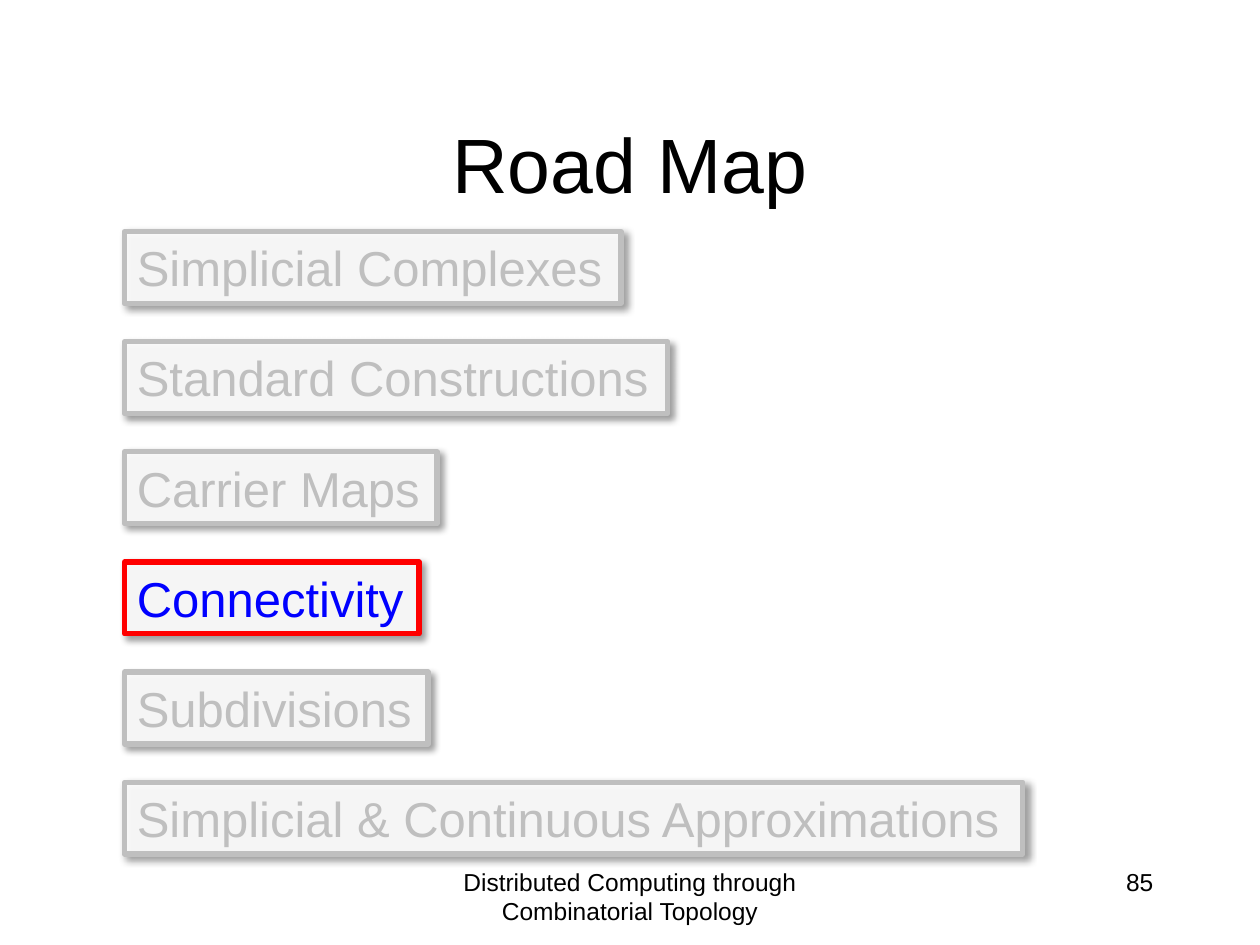
from lxml.etree import SubElement
from pptx import Presentation
from pptx.dml.color import RGBColor
from pptx.enum.text import MSO_ANCHOR, MSO_AUTO_SIZE, PP_ALIGN
from pptx.oxml.ns import qn
from pptx.util import Cm, Pt

GREY, RED, BLUE, BLACK, WHITE = "BFBFBF", "FF0000", "0000FF", "000000", "FFFFFF"
CURRENT = "Connectivity"
# Topic and width of its box in cm
TOPICS = [
    ("Simplicial Complexes", 10.01),
    ("Standard Constructions", 10.95),
    ("Carrier Maps", 6.3),
    (CURRENT, 5.94),
    ("Subdivisions", 6.12),
    ("Simplicial & Continuous Approximations", 18.11),
]


def color(value):
    return RGBColor.from_string(value)


def add_text(s, box, text, size, hue=BLACK, align=PP_ALIGN.LEFT,
             anchor=MSO_ANCHOR.TOP, wrap=True):
    sp = s.shapes.add_textbox(*(Cm(v) for v in box))
    tf = sp.text_frame
    tf.word_wrap = wrap
    tf.vertical_anchor = anchor
    tf.text = text
    p = tf.paragraphs[0]
    p.alignment = align
    font = p.runs[0].font
    font.name, font.size = "Arial", Pt(size)
    font.color.rgb = color(hue)
    return sp


def set_alpha(clr, percent):
    SubElement(clr, qn("a:alpha"), val=str(percent * 1000))


def add_shadow(sp):
    sp.shadow.inherit = False
    effects = sp._element.spPr.find(qn("a:effectLst"))
    shadow = SubElement(effects, qn("a:outerShdw"), blurRad=str(Pt(4)),
                        dist=str(Pt(3)), dir=str(45 * 60000),
                        algn="tl", rotWithShape="0")
    clr = SubElement(shadow, qn("a:srgbClr"), val=BLACK)
    set_alpha(clr, 40)


def add_topic(s, box, text):
    active = text == CURRENT
    sp = add_text(s, box, text, 28, BLUE if active else GREY, wrap=False)
    sp.text_frame.auto_size = MSO_AUTO_SIZE.SHAPE_TO_FIT_TEXT
    # Translucent white fill
    sp.fill.solid()
    sp.fill.fore_color.rgb = color(WHITE)
    set_alpha(sp._element.spPr.find(qn("a:solidFill"))[0], 90)
    sp.line.color.rgb = color(RED if active else GREY)
    sp.line.width = Pt(3)
    add_shadow(sp)


def add_road_map(s, left, top, height, step):
    for i, (text, width) in enumerate(TOPICS):
        add_topic(s, (left, top + i * step, width, height), text)


def add_footer(s, left, top, width, height):
    number_width = 5.28
    text_width = 8.05
    add_text(s, (left + (width - text_width) / 2, top, text_width, height),
             "Distributed Computing through Combinatorial Topology", 14,
             align=PP_ALIGN.CENTER)
    add_text(s, (left + width - number_width, top, number_width, height),
             "85", 14, align=PP_ALIGN.RIGHT)


def main():
    prs = Presentation()
    prs.slide_width, prs.slide_height = Cm(25.4), Cm(19.05)
    s = prs.slides.add_slide(prs.slide_layouts[6])
    # Title
    add_text(s, (1.9, 1.7, 21.6, 3.18), "Road Map", 44,
             align=PP_ALIGN.CENTER, anchor=MSO_ANCHOR.MIDDLE)
    # Topics
    add_road_map(s, left=2.51, top=4.67, height=1.45, step=2.22)
    # Footer
    add_footer(s, 1.9, 17.35, 21.6, 1.27)
    prs.save("out.pptx")


if __name__ == "__main__":
    main()
